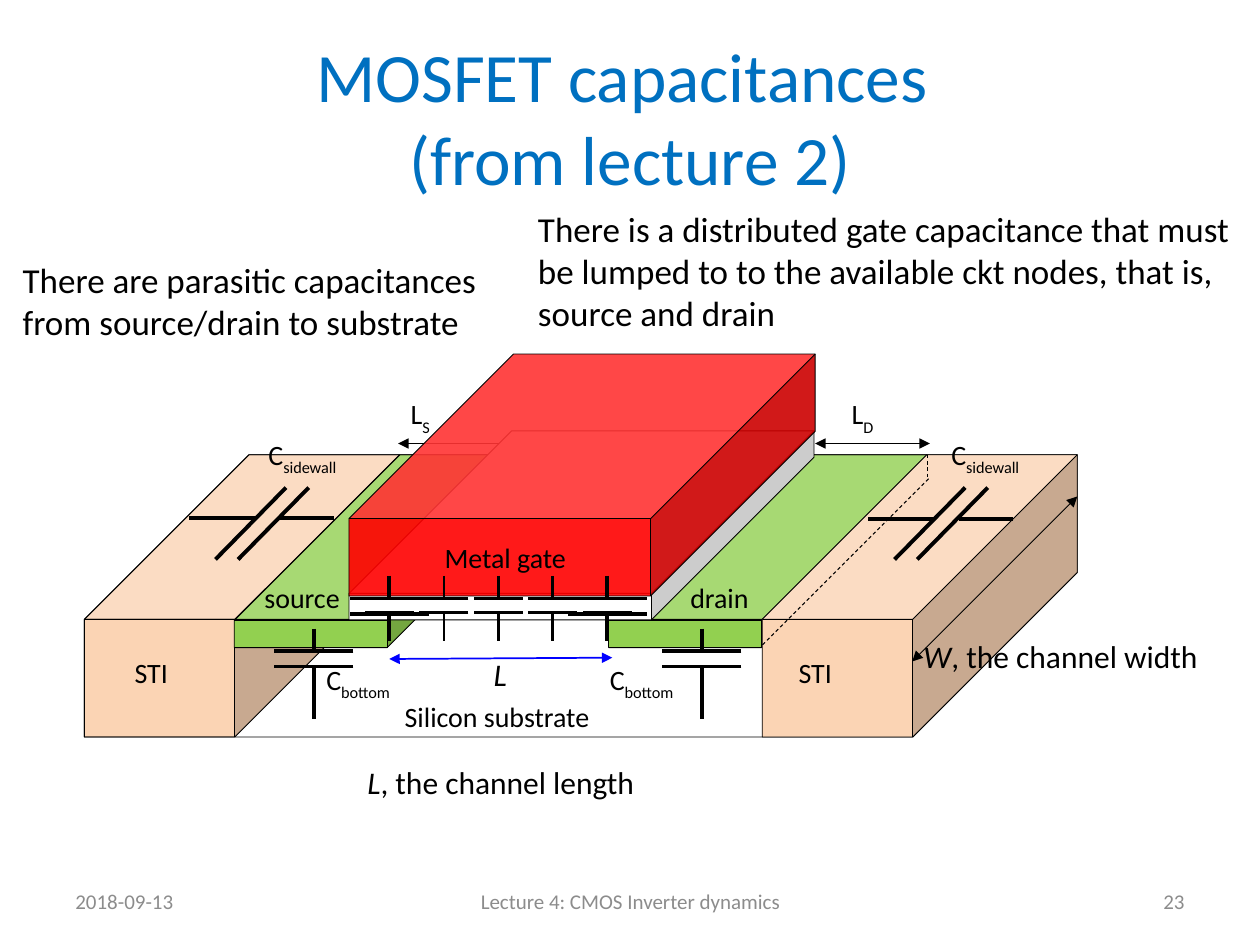
from lxml import etree
from pptx import Presentation
from pptx.dml.color import RGBColor
from pptx.enum.dml import MSO_LINE
from pptx.enum.shapes import MSO_CONNECTOR, MSO_SHAPE
from pptx.enum.text import MSO_ANCHOR, MSO_AUTO_SIZE, PP_ALIGN
from pptx.oxml.ns import qn
from pptx.util import Inches, Pt

COLORS = {
    "title": "0070C0", "ink": "000000", "footer": "8C8C8C", "sti": "FBD4B4",
    "diffusion": "92D050", "oxide": "FFFFFF", "gate": "FF0000", "length": "0000FF",
}
LEFT, CENTER, RIGHT = PP_ALIGN.LEFT, PP_ALIGN.CENTER, PP_ALIGN.RIGHT
PARAGRAPH_INSETS = (0.06, 0.03, 0.02, 0.03)
SYMBOL_INSETS = (0, 0.05, 0, 0.05)


def color(name):
    return RGBColor.from_string(COLORS[name])


class Diagram:
    font = "Calibri"

    def __init__(self, slide):
        self.slide = slide

    def style(self, run, size, ink="ink", italic=False):
        run.font.name = self.font
        run.font.size = Pt(size)
        run.font.color.rgb = color(ink)
        run.font.italic = italic

    def title(self, box, lines, size):
        heading = self.slide.shapes.title
        heading.left, heading.top, heading.width, heading.height = map(Inches, box)
        heading.text_frame.auto_size = MSO_AUTO_SIZE.NONE
        heading.text_frame.vertical_anchor = MSO_ANCHOR.MIDDLE
        paragraph = heading.text_frame.paragraphs[0]
        paragraph.alignment = CENTER
        for index, line in enumerate(lines):
            if index:
                paragraph.add_line_break()
            run = paragraph.add_run()
            run.text = line
            self.style(run, size, "title")

    def text(self, box, runs, size=16, align=LEFT, ink="ink", anchor=MSO_ANCHOR.TOP,
             insets=(0.1, 0.05, 0.1, 0.05), wrap=True):
        """Add one paragraph of (wording, kind) runs; kind is "", "italic" or "sub"."""
        frame = self.slide.shapes.add_textbox(*map(Inches, box)).text_frame
        frame.word_wrap = wrap
        frame.vertical_anchor = anchor
        (frame.margin_left, frame.margin_top,
         frame.margin_right, frame.margin_bottom) = map(Inches, insets)
        paragraph = frame.paragraphs[0]
        paragraph.alignment = align
        for wording, kind in runs:
            run = paragraph.add_run()
            run.text = wording
            self.style(run, size, ink, kind == "italic")
            if kind == "sub":
                run.font._element.set("baseline", "-30000")

    def symbol(self, left, top, letter, subscript, width=0.92):
        self.text((left, top, width, 0.66), [(letter, ""), (subscript, "sub")],
                  insets=SYMBOL_INSETS)

    def cube(self, box, depth, fill=None, opacity=100):
        block = self.slide.shapes.add_shape(MSO_SHAPE.CUBE, *map(Inches, box))
        block.adjustments[0] = depth
        block.shadow.inherit = False
        block.line.color.rgb = color("ink")
        block.line.width = Pt(0.5)
        if fill is None:
            block.fill.background()
            return
        block.fill.solid()
        block.fill.fore_color.rgb = color(fill)
        if opacity < 100:
            tint = block._element.spPr.find(qn("a:solidFill")).find(qn("a:srgbClr"))
            etree.SubElement(tint, qn("a:alpha"), val=str(opacity * 1000))

    def line(self, start, end, width=0.5, ink="ink", dashed=False, arrows=False):
        connector = self.slide.shapes.add_connector(
            MSO_CONNECTOR.STRAIGHT, *map(Inches, (*start, *end)))
        connector.line.color.rgb = color(ink)
        connector.line.width = Pt(width)
        if dashed:
            connector.line.dash_style = MSO_LINE.DASH
        properties = connector._element.spPr
        if arrows:
            for end_name in ("a:headEnd", "a:tailEnd"):
                etree.SubElement(properties.find(qn("a:ln")), qn(end_name), type="triangle")
        etree.SubElement(properties, qn("a:effectLst"))

    def capacitor(self, x, top, bottom, upper, lower, plate, width):
        """Draw an upright capacitor centred on x."""
        for y in (upper, lower):
            self.line((x + plate / 2, y), (x - plate / 2, y), width)
        self.line((x, top), (x, upper), width)
        self.line((x, lower), (x, bottom), width)

    def sidewall_capacitor(self, left, y):
        """Draw a horizontal capacitor with plates slanted along the depth axis."""
        for plate in (0.77, 0.95):
            self.line((left + plate, 3.87), (left + plate - 0.56, 4.44), 2.25)
        for near, far in ((0.53, 0), (1.15, 0.72)):
            self.line((left + near, y), (left + far, y), 2.25)


def draw_transistor(diagram):
    sti_depth, thin_depth = 0.583, 0.86
    source_x, drain_x = 1.86, 4.83
    diagram.line((3.16, 3.52), (4.08, 3.52), 0.75, arrows=True)
    diagram.cube((0.67, 3.61, 2.5, 2.24), sti_depth, "sti")
    for left in (source_x, drain_x):
        diagram.cube((left, 3.61, 2.53, 1.53), thin_depth, "diffusion")
    diagram.line((6.47, 3.52), (7.38, 3.52), 0.75, arrows=True)
    diagram.cube((0.67, 3.61, 7.88, 2.24), sti_depth)
    diagram.cube((2.77, 3.42, 3.69, 1.5), thin_depth, "oxide")
    diagram.cube((6.05, 3.61, 2.5, 2.24), sti_depth, "sti")
    for left in (0.97, 6.24):
        diagram.text((left, 5.15, 1.2, 0.66), [("STI", "")])
    diagram.line((8.55, 3.94), (7.24, 5.25), arrows=True)
    diagram.line((7.37, 3.8), (6.05, 5.12), dashed=True)
    diagram.line((7.36, 3.61), (7.36, 3.8), dashed=True)
    diagram.line((4.86, 5.22), (3.09, 5.23), 1, "length", arrows=True)
    diagram.cube((2.77, 2.81, 3.7, 1.92), 0.68, "gate", opacity=90)


def draw_capacitors(diagram):
    for left, y in ((1.5, 4.11), (6.89, 4.12)):
        diagram.sidewall_capacitor(left, y)
    for x in (2.49, 5.57):
        diagram.capacitor(x, 4.99, 5.71, 5.17, 5.29, 0.63, 2.25)
    gate_left, gate_right, steps = 3.09, 4.82, 4
    for x in (gate_left, gate_right):
        diagram.capacitor(x, 4.57, 5.09, 4.75, 4.87, 0.63, 2.25)
    for index in range(steps + 1):
        x = gate_left + index * (gate_right - gate_left) / steps
        diagram.capacitor(x, 4.57, 5.09, 4.75, 4.86, 0.39, 1.5)


def label_parts(diagram):
    diagram.text((2.55, 6.01, 2.85, 0.44),
                 [("L", "italic"), (", the channel length", "")], 18, CENTER)
    for left, region in ((5.38, "drain"), (2, "source")):
        diagram.text((left, 4.56, 1.38, 0.66), [(region, "")])
    for left, subscript in ((6.76, "D"), (3.26, "S")):
        diagram.symbol(left, 3.1, "L", subscript, 0.63)
    for left in (2.59, 4.84):
        diagram.symbol(left, 5.21, "C", "bottom")
    for left in (2.13, 7.55):
        diagram.symbol(left, 3.42, "C", "sidewall")
    diagram.text((3.82, 5.15, 0.32, 0.4), [("L", "italic")], 18, wrap=False)
    diagram.text((3.12, 4.24, 1.78, 0.41), [("Metal gate", "")], align=CENTER)
    diagram.text((2.88, 5.5, 2.13, 0.41), [("Silicon substrate", "")], align=CENTER)
    diagram.text((7.23, 5.01, 2.75, 0.66),
                 [("W", "italic"), (", the channel width", "")], 18)


def add_remarks(diagram):
    for box, remark in (
        ((4.21, 1.62, 5.91, 1.1),
         "There is a distributed gate capacitance that must be lumped to to the "
         "available ckt nodes, that is, source and drain"),
        ((0.12, 2.02, 3.94, 0.76),
         "There are parasitic capacitances from source/drain to substrate"),
    ):
        diagram.text(box, [(remark, "")], 20, insets=PARAGRAPH_INSETS)


def add_footer(diagram):
    for left, width, wording, align in (
        (0.5, 2.33, "2018-09-13", LEFT),
        (3.42, 3.17, "Lecture 4: CMOS Inverter dynamics", CENTER),
        (7.17, 2.33, "23", RIGHT),
    ):
        diagram.text((left, 6.95, width, 0.4), [(wording, "")], 12, align,
                     "footer", MSO_ANCHOR.MIDDLE)


def main():
    presentation = Presentation()
    presentation.slide_width, presentation.slide_height = Inches(10), Inches(7.5)
    title_only = presentation.slide_layouts[5]
    diagram = Diagram(presentation.slides.add_slide(title_only))
    diagram.title((0.5, 0.3, 9, 1.25), ["MOSFET capacitances ", "(from lecture 2)"], 39.6)
    add_footer(diagram)
    draw_transistor(diagram)
    draw_capacitors(diagram)
    label_parts(diagram)
    add_remarks(diagram)
    presentation.save("out.pptx")


if __name__ == "__main__":
    main()
